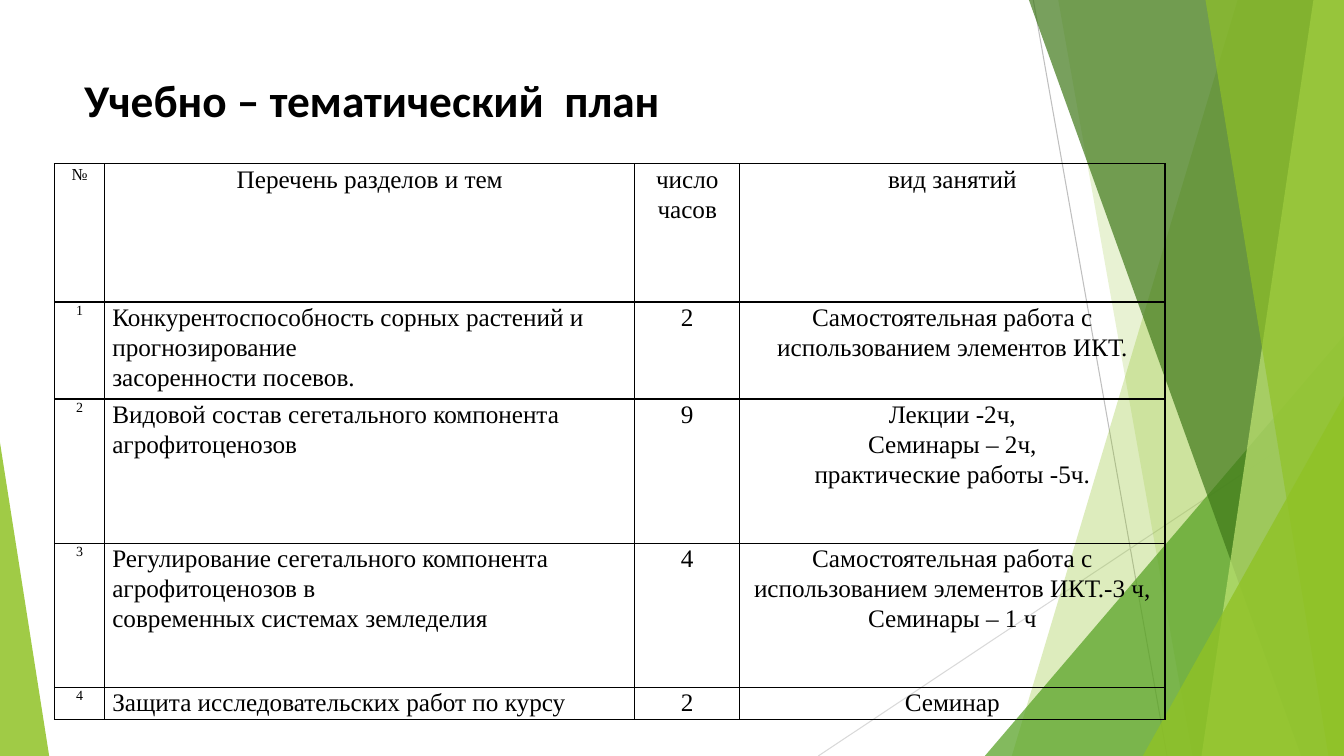
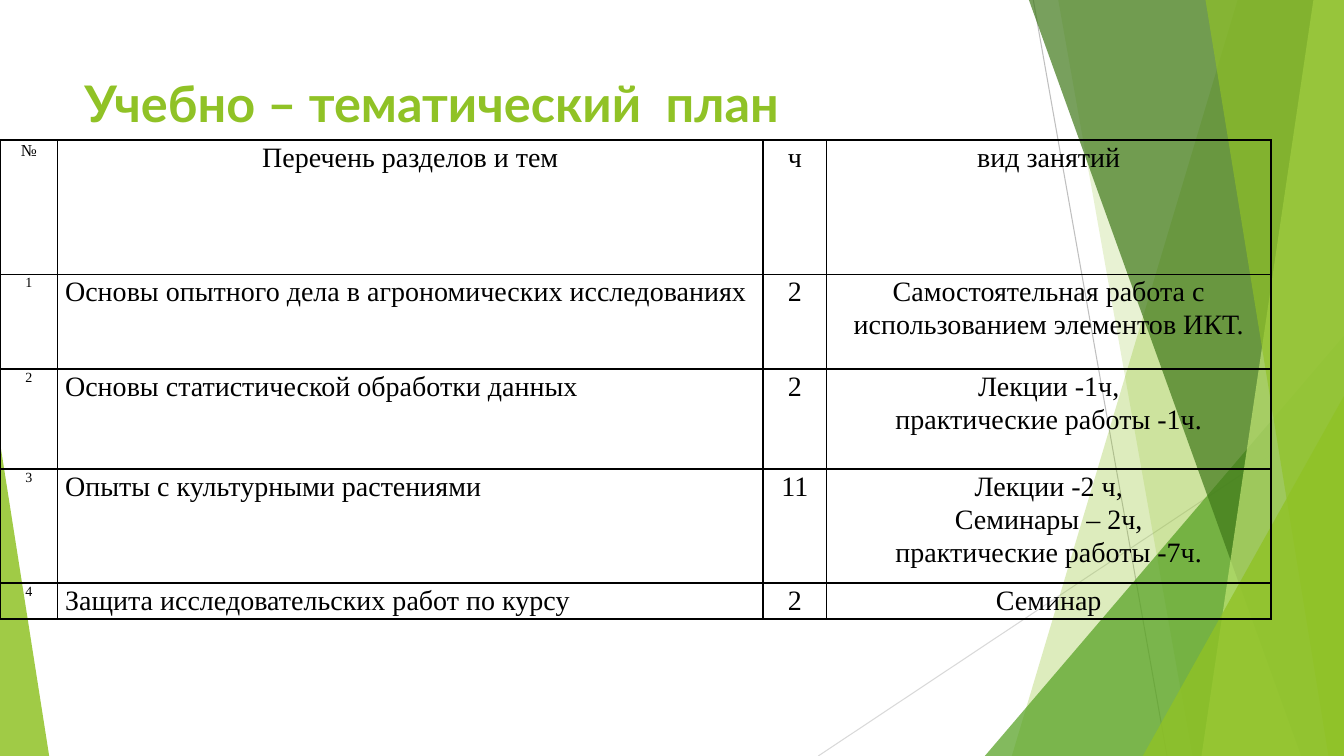
from dataclasses import dataclass

import lxml.etree
import pptx
import pptx.dml.color
import pptx.enum.shapes
import pptx.enum.text
import pptx.oxml.ns
import pptx.presentation
import pptx.shapes.base
import pptx.slide
import pptx.table
import pptx.util

Cm = pptx.util.Cm
Pt = pptx.util.Pt
qn = pptx.oxml.ns.qn
ALIGN = pptx.enum.text.PP_ALIGN

SLIDE_WIDTH = 33.87
SLIDE_HEIGHT = 19.05
BLACK = "000000"
LIME = "90C226"
GREEN = "54A021"
DARK_GREEN = "3F7819"
PALE_GREEN = "C0E474"
TABLE_FONT = "Times New Roman"
TITLE = "Учебно – тематический  план"
TOPICS_HEADING = "Перечень разделов и тем"
KIND_HEADING = "вид занятий"
DEFENCE_ROW = ("4", "Защита исследовательских работ по курсу", "2", "Семинар")


@dataclass(frozen=True)
class Ray:
    start: tuple[float, float]
    end: tuple[float, float]
    color: str


@dataclass(frozen=True)
class Band:
    top_x: float
    bottom_x: float
    color: str
    opacity: int


@dataclass(frozen=True)
class Triangle:
    left: float
    top: float
    width: float
    apex: float
    color: str
    opacity: int


@dataclass(frozen=True)
class Plan:
    title_font: str
    title_size: float
    title_color: str
    left: float
    top: float
    text_size: float
    columns: tuple[float, ...]
    heights: tuple[float, ...]
    rows: tuple[tuple[str, ...], ...]


RAYS = (
    Ray((26.04, 0), (29.41, SLIDE_HEIGHT), "BFBFBF"),
    Ray((SLIDE_WIDTH, 10.24), (20.62, SLIDE_HEIGHT), "D9D9D9"),
)

FACETS = (
    Band(31.19, 25.5, LIME, 30),
    Band(26.67, 30.05, LIME, 20),
    Triangle(24.82, 8.46, SLIDE_WIDTH - 24.82, 1, GREEN, 72),
    Band(25.93, 32.79, DARK_GREEN, 70),
    Band(33.1, 30.28, PALE_GREEN, 70),
    Band(30.38, 33.48, LIME, 65),
    Triangle(28.8, 9.98, SLIDE_WIDTH - 28.8, 1, LIME, 80),
    Triangle(0, 11.15, 1.24, 0, LIME, 85),
)

PLANS = (
    Plan(
        "Calibri", 32.4, BLACK, 1.37, 4.13, 18,
        (1.27, 13.36, 2.64, 10.72),
        (3.48, 2.26, 3.63, 3.63, 0.74),
        (
            ("№", TOPICS_HEADING, "число часов", KIND_HEADING),
            (
                "1",
                "Конкурентоспособность сорных растений и прогнозирование\n"
                "засоренности посевов.",
                "2",
                "Самостоятельная работа с использованием элементов ИКТ.",
            ),
            (
                "2",
                "Видовой состав сегетального компонента агрофитоценозов",
                "9",
                "Лекции -2ч,\nСеминары – 2ч,\nпрактические работы -5ч.",
            ),
            (
                "3",
                "Регулирование сегетального компонента агрофитоценозов в\n"
                "современных системах земледелия",
                "4",
                "Самостоятельная работа с использованием элементов ИКТ.-3 ч,\n"
                "Семинары – 1 ч",
            ),
            DEFENCE_ROW,
        ),
    ),
    Plan(
        "Lato", 36, LIME, 0, 3.53, 20,
        (1.45, 17.78, 1.6, 11.2),
        (3.38, 2.39, 2.52, 2.87, 0.84),
        (
            ("№", TOPICS_HEADING, "ч", KIND_HEADING),
            (
                "1",
                "Основы опытного дела в агрономических исследованиях",
                "2",
                "Самостоятельная работа с использованием элементов ИКТ.",
            ),
            (
                "2",
                "Основы статистической обработки данных",
                "2",
                "Лекции -1ч,\nпрактические работы -1ч.",
            ),
            (
                "3",
                "Опыты с культурными растениями",
                "11",
                "Лекции -2 ч,\nСеминары – 2ч,\nпрактические работы -7ч.",
            ),
            DEFENCE_ROW,
        ),
    ),
)


def rgb(color: str) -> pptx.dml.color.RGBColor:
    return pptx.dml.color.RGBColor.from_string(color)


def paint(shape: pptx.shapes.base.BaseShape, color: str, opacity: int) -> None:
    shape.shadow.inherit = False
    shape.fill.solid()
    shape.fill.fore_color.rgb = rgb(color)
    shape.line.fill.background()
    fill_color = shape.element.spPr.find(qn("a:solidFill")).find(qn("a:srgbClr"))
    lxml.etree.SubElement(fill_color, qn("a:alpha"), val=str(opacity * 1000))


def draw_ray(slide: pptx.slide.Slide, ray: Ray) -> None:
    connector = slide.shapes.add_connector(
        pptx.enum.shapes.MSO_CONNECTOR.STRAIGHT,
        *(Cm(value) for value in ray.start + ray.end),
    )
    connector.line.color.rgb = rgb(ray.color)
    connector.line.width = Pt(0.75)
    lxml.etree.SubElement(connector.element.spPr, qn("a:effectLst"))


def draw_band(slide: pptx.slide.Slide, band: Band) -> None:
    builder = slide.shapes.build_freeform(Cm(band.top_x), 0)
    corners = ((SLIDE_WIDTH, 0), (SLIDE_WIDTH, SLIDE_HEIGHT), (band.bottom_x, SLIDE_HEIGHT))
    builder.add_line_segments([(Cm(x), Cm(y)) for x, y in corners], close=True)
    paint(builder.convert_to_shape(), band.color, band.opacity)


def draw_triangle(slide: pptx.slide.Slide, triangle: Triangle) -> None:
    shape = slide.shapes.add_shape(
        pptx.enum.shapes.MSO_SHAPE.ISOSCELES_TRIANGLE,
        Cm(triangle.left),
        Cm(triangle.top),
        Cm(triangle.width),
        Cm(SLIDE_HEIGHT - triangle.top),
    )
    shape.adjustments[0] = triangle.apex
    paint(shape, triangle.color, triangle.opacity)


def draw_background(slide: pptx.slide.Slide) -> None:
    for ray in RAYS:
        draw_ray(slide, ray)
    for facet in FACETS:
        if isinstance(facet, Band):
            draw_band(slide, facet)
        else:
            draw_triangle(slide, facet)


def draw_title(slide: pptx.slide.Slide, plan: Plan) -> None:
    box = slide.shapes.add_textbox(Cm(1.88), Cm(1.7), Cm(23.88), Cm(1.9))
    box.text_frame.word_wrap = True
    paragraph = box.text_frame.paragraphs[0]
    paragraph.text = TITLE
    paragraph.font.name = plan.title_font
    paragraph.font.size = Pt(plan.title_size)
    paragraph.font.bold = True
    paragraph.font.color.rgb = rgb(plan.title_color)


def add_borders(cell: pptx.table._Cell) -> None:
    properties = cell._tc.get_or_add_tcPr()
    for side in ("a:lnL", "a:lnR", "a:lnT", "a:lnB"):
        border = lxml.etree.SubElement(properties, qn(side), w=str(Pt(1)))
        fill = lxml.etree.SubElement(border, qn("a:solidFill"))
        lxml.etree.SubElement(fill, qn("a:srgbClr"), val=BLACK)


def fill_cell(cell: pptx.table._Cell, text: str, size: float, alignment: ALIGN) -> None:
    add_borders(cell)
    cell.fill.background()
    cell.margin_left = cell.margin_right = Cm(0.19)
    cell.margin_top = cell.margin_bottom = 0
    cell.text = text
    for paragraph in cell.text_frame.paragraphs:
        paragraph.alignment = alignment
        paragraph.line_spacing = 1.07
        paragraph.font.name = TABLE_FONT
        paragraph.font.size = Pt(size)
        paragraph.font.color.rgb = rgb(BLACK)


def draw_table(slide: pptx.slide.Slide, plan: Plan) -> None:
    table = slide.shapes.add_table(
        len(plan.heights),
        len(plan.columns),
        Cm(plan.left),
        Cm(plan.top),
        Cm(sum(plan.columns)),
        Cm(sum(plan.heights)),
    ).table
    table.first_row = False
    table.horz_banding = False
    for column, width in zip(table.columns, plan.columns):
        column.width = Cm(width)
    for row, height in zip(table.rows, plan.heights):
        row.height = Cm(height)
    for row_index, texts in enumerate(plan.rows):
        is_header = row_index == 0
        number_size = 12 if is_header else 10
        for column_index, text in enumerate(texts):
            size = number_size if column_index == 0 else plan.text_size
            is_topic = column_index == 1 and not is_header
            alignment = ALIGN.LEFT if is_topic else ALIGN.CENTER
            fill_cell(table.cell(row_index, column_index), text, size, alignment)


def add_plan_slide(presentation: pptx.presentation.Presentation, plan: Plan) -> None:
    slide = presentation.slides.add_slide(presentation.slide_layouts[6])
    draw_background(slide)
    draw_title(slide, plan)
    draw_table(slide, plan)


def main() -> None:
    presentation = pptx.Presentation()
    presentation.slide_width = Cm(SLIDE_WIDTH)
    presentation.slide_height = Cm(SLIDE_HEIGHT)
    for plan in PLANS:
        add_plan_slide(presentation, plan)
    presentation.save("out.pptx")


if __name__ == "__main__":
    main()
